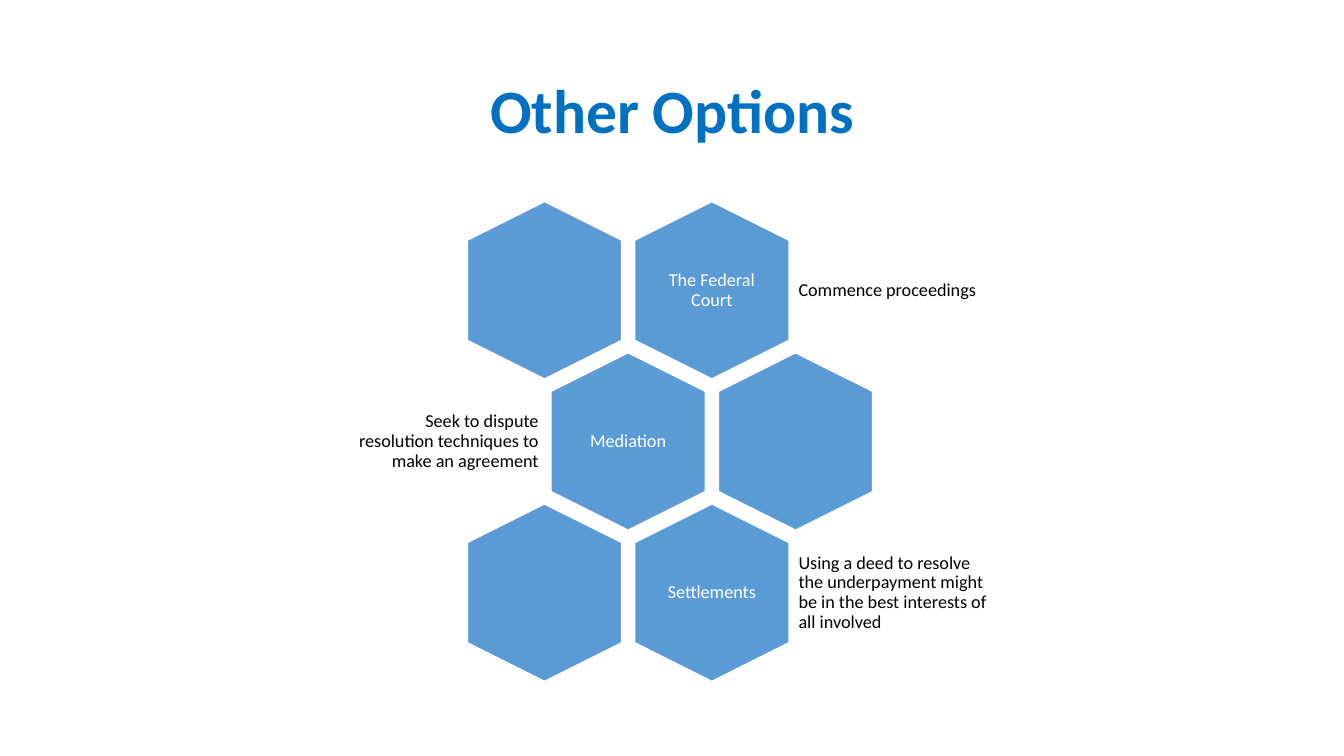
from pptx import Presentation
from pptx.dml.color import RGBColor
from pptx.enum.shapes import MSO_SHAPE as SHAPE
from pptx.enum.text import MSO_ANCHOR as ANCHOR, PP_ALIGN as ALIGN
from pptx.util import Inches, Pt

TITLE_BLUE = RGBColor(0x00, 0x70, 0xC0)
HEX_BLUE = RGBColor(0x5B, 0x9B, 0xD5)
WHITE = RGBColor(0xFF, 0xFF, 0xFF)
BLACK = RGBColor(0x00, 0x00, 0x00)

COL_STEP, ROW_STEP = 1.66, 1.5
FIRST_X, FIRST_Y = 5.4, 2.88
HEX_LONG, HEX_SHORT = 1.76, 1.53
LABEL_W, LABEL_H = 1.06, 1.21
NOTE_H = 1.06
NOTE_GAP = {ALIGN.LEFT: 0.81, ALIGN.RIGHT: 0.84}
NOTE_W = {ALIGN.LEFT: 1.97, ALIGN.RIGHT: 1.9}

OPTIONS = [
    (1, "The Federal Court", "Commence proceedings", ALIGN.LEFT),
    (0, "Mediation",
     "Seek to dispute resolution techniques to make an agreement", ALIGN.RIGHT),
    (1, "Settlements",
     "Using a deed to resolve the underpayment might be in the best "
     "interests of all involved", ALIGN.LEFT),
]


def set_all(target, **values):
    for name, value in values.items():
        setattr(target, name, value)


def center(col, row):
    return FIRST_X + (col + row % 2 / 2) * COL_STEP, FIRST_Y + row * ROW_STEP


def box(cx, cy, w, h):
    return [Inches(v) for v in (cx - w / 2, cy - h / 2, w, h)]


def add_text(s, text, frame, color, align, size=13, bold=False, inset=0.05):
    tf = s.shapes.add_textbox(*frame).text_frame
    set_all(tf, word_wrap=True, vertical_anchor=ANCHOR.MIDDLE,
            margin_left=Inches(inset), margin_right=Inches(inset),
            margin_top=Inches(0.05), margin_bottom=Inches(0.05))
    p = tf.paragraphs[0]
    set_all(p, alignment=align, line_spacing=0.9)
    r = p.add_run()
    r.text = text
    set_all(r.font, name="Calibri", size=Pt(size), bold=bold)
    r.font.color.rgb = color


def add_hexagon(s, col, row):
    sp = s.shapes.add_shape(SHAPE.HEXAGON, *box(*center(col, row), HEX_LONG, HEX_SHORT))
    sp.rotation = 90
    sp.adjustments[0] = 0.25
    sp.shadow.inherit = False
    sp.fill.solid()
    sp.fill.fore_color.rgb = HEX_BLUE
    sp.line.color.rgb = WHITE
    sp.line.width = Pt(1)


def add_note(s, text, cx, cy, align):
    side = 1 if align == ALIGN.LEFT else -1
    w = NOTE_W[align]
    note_x = cx + side * (NOTE_GAP[align] + w / 2)
    add_text(s, text, box(note_x, cy, w, NOTE_H), BLACK, align)


def main():
    prs = Presentation()
    set_all(prs, slide_width=Inches(13.33), slide_height=Inches(7.5))
    s = prs.slides.add_slide(prs.slide_layouts[6])
    add_text(s, "Other Options", box(6.67, 1.13, 11.5, 1.45), TITLE_BLUE,
             ALIGN.CENTER, size=44, bold=True, inset=0.1)
    for row, (label_col, label, note, align) in enumerate(OPTIONS):
        for col in range(2):
            add_hexagon(s, col, row)
        cx, cy = center(label_col, row)
        add_text(s, label, box(cx, cy, LABEL_W, LABEL_H), WHITE, ALIGN.CENTER)
        add_note(s, note, cx, cy, align)
    prs.save("out.pptx")


if __name__ == "__main__":
    main()
